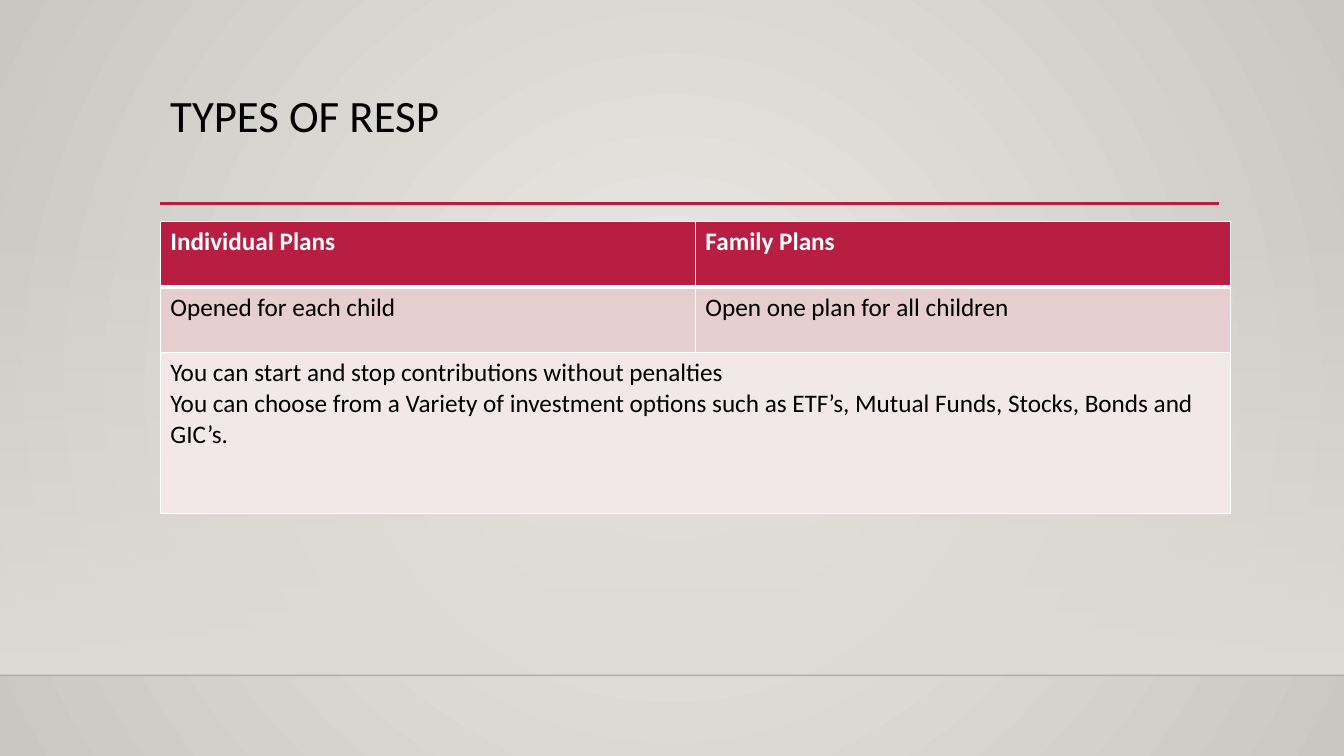
from lxml import etree
from pptx import Presentation
from pptx import util as u
from pptx.dml import color
from pptx.enum import shapes, text
from pptx.oxml import ns

COLORS = {
    "black": "000000",
    "white": "FFFFFF",
    "crimson": "B71E42",
    "rose": "E6CDCF",
    "blush": "F3E8E9",
    "glow": "ECEAE7",
    "edge": "CAC7C1",
    "sand": "DFDBD5",
}
SLIDE_WIDTH, SLIDE_HEIGHT = 33.87, 19.05
LEFT = 4.04
FLOOR = 17.02


def add_child(parent, tag, **attributes):
    return etree.SubElement(parent, ns.qn(tag), attributes)


class SlideBuilder:
    font = "Calibri"

    def __init__(self, slide):
        self.slide = slide

    def rgb(self, name):
        return color.RGBColor.from_string(COLORS[name])

    def fade(self, element, percent):
        add_child(element, "a:alpha", val=str(percent * 1000))

    def gradient(self, fill, names):
        fill.gradient()
        for stop, name in zip(fill.gradient_stops, names):
            stop.color.rgb = self.rgb(name)

    def background(self, center, edge):
        self.gradient(self.slide.background.fill, [center, edge])
        gradient = next(self.slide.element.iter(ns.qn("a:gradFill")))
        gradient.remove(gradient.find(ns.qn("a:lin")))
        circle = add_child(gradient, "a:path", path="circle")
        add_child(circle, "a:fillToRect", l="50000", t="50000", r="50000", b="50000")

    def veil(self, top, height, name):
        shape = self.slide.shapes.add_shape(
            shapes.MSO_SHAPE.RECTANGLE, 0, u.Cm(top), u.Cm(SLIDE_WIDTH), u.Cm(height))
        shape.shadow.inherit = False
        shape.line.fill.background()
        self.gradient(shape.fill, [name, name])
        shape.fill.gradient_angle = 270
        self.fade(next(shape.element.iter(ns.qn("a:srgbClr"))), 0)

    def rule(self, left, right, top, name, width, opacity=100):
        line = self.slide.shapes.add_connector(
            shapes.MSO_CONNECTOR.STRAIGHT, u.Cm(left), u.Cm(top), u.Cm(right), u.Cm(top))
        line.line.color.rgb = self.rgb(name)
        line.line.width = u.Pt(width)
        if opacity < 100:
            self.fade(next(line.element.iter(ns.qn("a:srgbClr"))), opacity)
        add_child(line.element.spPr, "a:effectLst")

    def format_text(self, frame, size, name, bold=False):
        for paragraph in frame.paragraphs:
            for run in paragraph.runs:
                run.font.name = self.font
                run.font.size = u.Pt(size)
                run.font.bold = bold
                run.font.color.rgb = self.rgb(name)

    def title(self, content, left, top, width, height):
        shape = self.slide.shapes.add_textbox(u.Cm(left), u.Cm(top), u.Cm(width), u.Cm(height))
        frame = shape.text_frame
        frame.word_wrap = True
        frame.vertical_anchor = text.MSO_ANCHOR.TOP
        frame.text = content
        frame.paragraphs[0].line_spacing = 0.9
        self.format_text(frame, 32, "black")

    def borders(self, cell, widths):
        properties = cell._tc.get_or_add_tcPr()
        for side, width in zip("LRTB", widths):
            line = add_child(properties, f"a:ln{side}", w=str(u.Pt(width)))
            fill = add_child(line, "a:solidFill")
            add_child(fill, "a:srgbClr", val=COLORS["white"])

    def table(self, rows, left, top, width, heights, fills):
        columns = len(rows[0])
        table = self.slide.shapes.add_table(
            len(rows), columns, u.Cm(left), u.Cm(top), u.Cm(width), u.Cm(sum(heights))).table
        table.horz_banding = False
        for column in table.columns:
            column.width = u.Cm(width / columns)
        for index, (values, height, fill) in enumerate(zip(rows, heights, fills)):
            table.rows[index].height = u.Cm(height)
            header = index == 0
            for position in range(columns):
                cell = table.cell(index, position)
                self.borders(cell, [1, 1, 3 if index == 1 else 1, 3 if header else 1])
                cell.fill.solid()
                cell.fill.fore_color.rgb = self.rgb(fill)
                if position < len(values):
                    cell.text_frame.text = values[position]
                    self.format_text(cell.text_frame, 18, "white" if header else "black", header)
            if len(values) < columns:
                table.cell(index, 0).merge(table.cell(index, columns - 1))


def main():
    presentation = Presentation()
    presentation.slide_width = u.Cm(SLIDE_WIDTH)
    presentation.slide_height = u.Cm(SLIDE_HEIGHT)
    builder = SlideBuilder(presentation.slides.add_slide(presentation.slide_layouts[6]))

    builder.background("glow", "edge")
    builder.veil(5.61, FLOOR - 5.61, "sand")
    builder.rule(0, SLIDE_WIDTH, FLOOR, "black", 1, opacity=20)
    builder.rule(LEFT, 30.73, 5.13, "crimson", 2.5)
    builder.title("TYPES OF RESP", LEFT, 2.24, 26.67, 2.92)
    plans = [
        ["Individual Plans", "Family Plans"],
        ["Opened for each child", "Open one plan for all children"],
        ["You can start and stop contributions without penalties\n"
         "You can choose from a Variety of investment options such as "
         "ETF’s, Mutual Funds, Stocks, Bonds and GIC’s."],
    ]
    builder.table(plans, LEFT, 5.59, 26.97, [1.65, 1.65, 4.06], ["crimson", "rose", "blush"])
    presentation.save("out.pptx")


if __name__ == "__main__":
    main()
